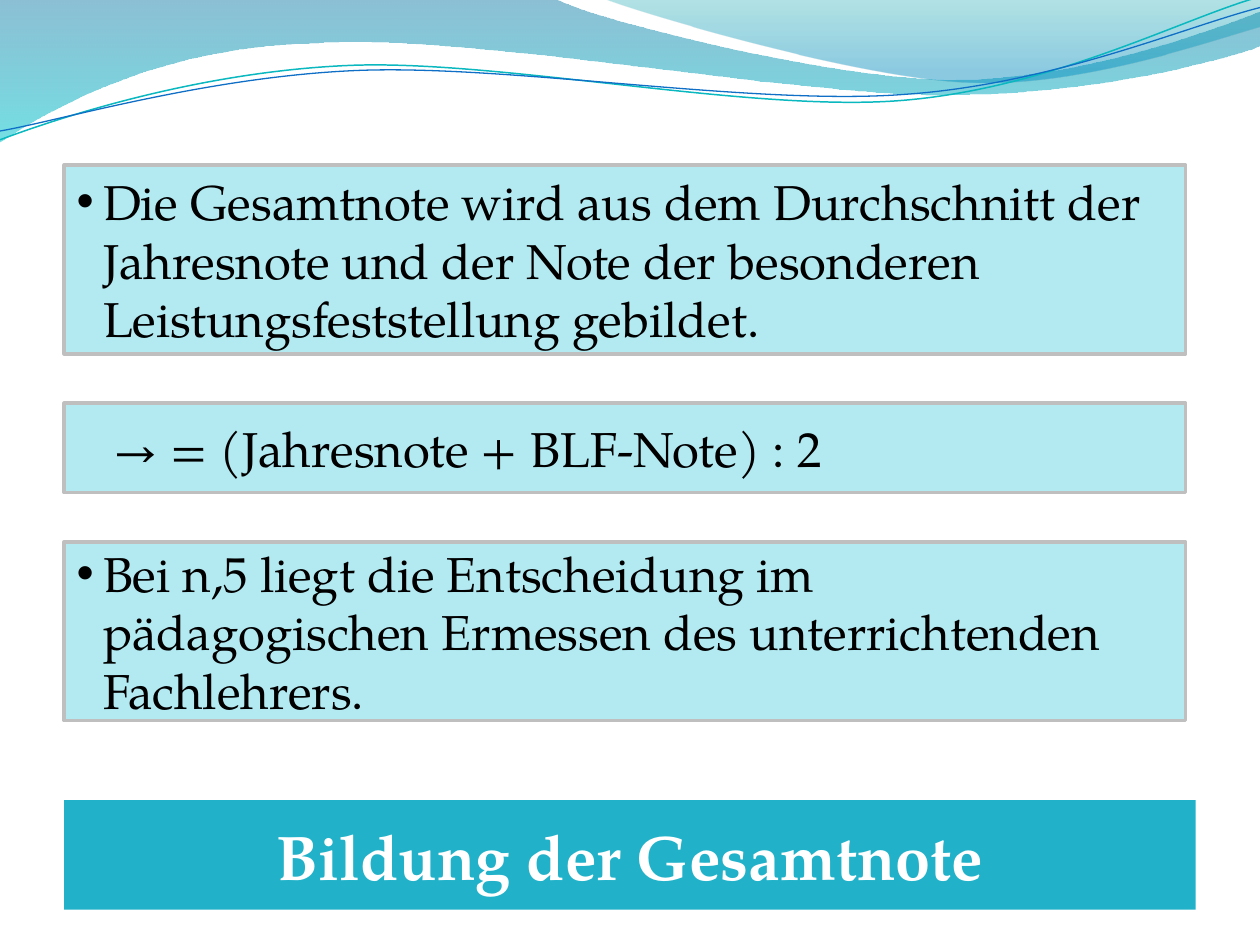
from dataclasses import dataclass
from typing import Optional

from lxml.etree import SubElement
from pptx import Presentation
from pptx.dml.color import RGBColor
from pptx.enum.shapes import MSO_SHAPE as Shape
from pptx.enum.text import MSO_ANCHOR as Anchor, PP_ALIGN as Align
from pptx.oxml.ns import qn
from pptx.util import Inches, Pt

FONT = "TeX Gyre Pagella"
COLORS = {
    "panel": "B3EAF2",
    "border": "BFBFBF",
    "banner": "21B2C9",
    "text": "000000",
    "white": "FFFFFF",
    "teal": "0AB8BF",
    "blue": "0F6FC6",
    "wave_top": "0074A1",
    "wave_bottom": "00C6CF",
    "crest_top": "00A1A9",
    "crest_bottom": "008BBF",
}
LEFT = 0.51


@dataclass
class Stop:
    position: float
    color: str
    opacity: int


@dataclass
class Wave:
    start: tuple
    segments: list
    stops: Optional[list] = None
    line: Optional[str] = None
    line_width: float = 0


@dataclass
class Panel:
    top: float
    height: float
    lines: list
    indent: float
    bullet: bool = True


WAVES = [
    Wave((0, 0), [
        [(4.4, -0.01)],
        [(4.76, 0.17), (6.64, 0.63), (7.58, 0.63)],
        [(8.53, 0.63), (9.58, 0.26), (10, 0.09)],
        [(10.01, 0.36)],
        [(9.83, 0.44), (8.7, 0.76), (7.46, 0.75)],
        [(6.22, 0.75), (3.82, 0.28), (2.57, 0.34)],
        [(1.29, 0.36), (0.46, 0.83), (-0.01, 1.13)],
        [(0, 0)],
    ], stops=[Stop(0, "wave_top", 45), Stop(1, "wave_bottom", 55)]),
    Wave((4.79, -0.01), [
        [(5.09, 0.11), (6.82, 0.62), (7.69, 0.65)],
        [(8.56, 0.69), (9.61, 0.32), (10, 0.21)],
        [(10, 0)],
        [(4.79, -0.01)],
    ], stops=[Stop(0, "crest_top", 30), Stop(0.8, "crest_bottom", 45)]),
    Wave((0, 1.11), [
        [(0.48, 0.93), (1.58, 0.57), (2.77, 0.52)],
        [(3.95, 0.47), (5.93, 0.89), (7.13, 0.8)],
        [(8.33, 0.71), (9.38, 0.15), (9.98, -0.02)],
    ], line="teal", line_width=0.85),
    Wave((0, 1.04), [
        [(0.47, 0.96), (1.64, 0.61), (2.83, 0.56)],
        [(4.03, 0.51), (5.97, 0.84), (7.17, 0.75)],
        [(8.36, 0.67), (9.41, 0.21), (10, 0.06)],
    ], line="blue", line_width=0.75),
]

PANELS = [
    Panel(3.2, 0.71, ["→ = (Jahresnote + BLF-Note) : 2"], 0.29, bullet=False),
    Panel(4.3, 1.42, [
        "Bei n,5 liegt die Entscheidung im",
        "pädagogischen Ermessen des unterrichtenden",
        "Fachlehrers.",
    ], 0.21),
    Panel(1.31, 1.5, [
        "Die Gesamtnote wird aus dem Durchschnitt der",
        "Jahresnote und der Note der besonderen",
        "Leistungsfeststellung gebildet.",
    ], 0.21),
]


def color(name: str) -> RGBColor:
    return RGBColor.from_string(COLORS[name])


def bend_segments(shape, segments: list) -> None:
    lines = iter(list(shape._element.spPr.iter(qn("a:lnTo"))))
    for segment in segments:
        curve = next(lines)
        if len(segment) == 3:
            curve.tag = qn("a:cubicBezTo")
            for _ in range(2):
                extra = next(lines)
                curve.append(extra[0])
                extra.getparent().remove(extra)


def fill_gradient(shape, stops: list) -> None:
    shape.fill.gradient()
    shape.fill.gradient_angle = 270
    for target, stop in zip(shape.fill.gradient_stops, stops):
        target.position = stop.position
        target.color.rgb = color(stop.color)
    elements = shape._element.spPr.iter(qn("a:srgbClr"))
    for element, stop in zip(elements, stops):
        SubElement(element, qn("a:alpha"), val=str(stop.opacity * 1000))


def draw_wave(slide, wave: Wave) -> None:
    points = [wave.start] + [point for segment in wave.segments for point in segment]
    vertices = [(Inches(x), Inches(y)) for x, y in points]
    builder = slide.shapes.build_freeform(*vertices[0])
    builder.add_line_segments(vertices[1:], close=wave.stops is not None)
    shape = builder.convert_to_shape()
    bend_segments(shape, wave.segments)
    shape.shadow.inherit = False
    if wave.stops:
        fill_gradient(shape, wave.stops)
        shape.line.fill.background()
    else:
        shape.fill.background()
        shape.line.color.rgb = color(wave.line)
        shape.line.width = Pt(wave.line_width)


def add_box(slide, top: float, width: float, height: float, fill: str):
    shape = slide.shapes.add_shape(
        Shape.RECTANGLE, Inches(LEFT), Inches(top), Inches(width), Inches(height))
    shape.shadow.inherit = False
    shape.fill.solid()
    shape.fill.fore_color.rgb = color(fill)
    shape.line.fill.background()
    shape.text_frame.word_wrap = True
    shape.text_frame.vertical_anchor = Anchor.MIDDLE
    return shape


def add_run(paragraph, text: str, size: int, name: str, bold: bool = False) -> None:
    run = paragraph.add_run()
    run.text = text
    run.font.name = FONT
    run.font.size = Pt(size)
    run.font.bold = bold
    run.font.color.rgb = color(name)


def draw_panel(slide, panel: Panel) -> None:
    shape = add_box(slide, panel.top, 8.9, panel.height, "panel")
    shape.line.color.rgb = color("border")
    shape.line.width = Pt(2)
    paragraph = shape.text_frame.paragraphs[0]
    paragraph.alignment = Align.LEFT
    properties = paragraph._p.get_or_add_pPr()
    properties.set("marL", str(Inches(panel.indent)))
    if panel.bullet:
        properties.set("indent", str(-Inches(panel.indent)))
        SubElement(properties, qn("a:buFont"), typeface="Arial")
        SubElement(properties, qn("a:buChar"), char="•")
    for index, line in enumerate(panel.lines):
        if index:
            paragraph.add_line_break()
        add_run(paragraph, line, 28, "text")


def draw_banner(slide, text: str) -> None:
    shape = add_box(slide, 6.35, 8.98, 0.87, "banner")
    paragraph = shape.text_frame.paragraphs[0]
    paragraph.alignment = Align.CENTER
    paragraph.space_before = Pt(7)
    add_run(paragraph, text, 36, "white", bold=True)


def main() -> None:
    presentation = Presentation()
    presentation.slide_width = Inches(10)
    presentation.slide_height = Inches(7.5)
    slide = presentation.slides.add_slide(presentation.slide_layouts[6])
    for wave in WAVES:
        draw_wave(slide, wave)
    for panel in PANELS:
        draw_panel(slide, panel)
    draw_banner(slide, "Bildung der Gesamtnote")
    presentation.save("out.pptx")


if __name__ == "__main__":
    main()
